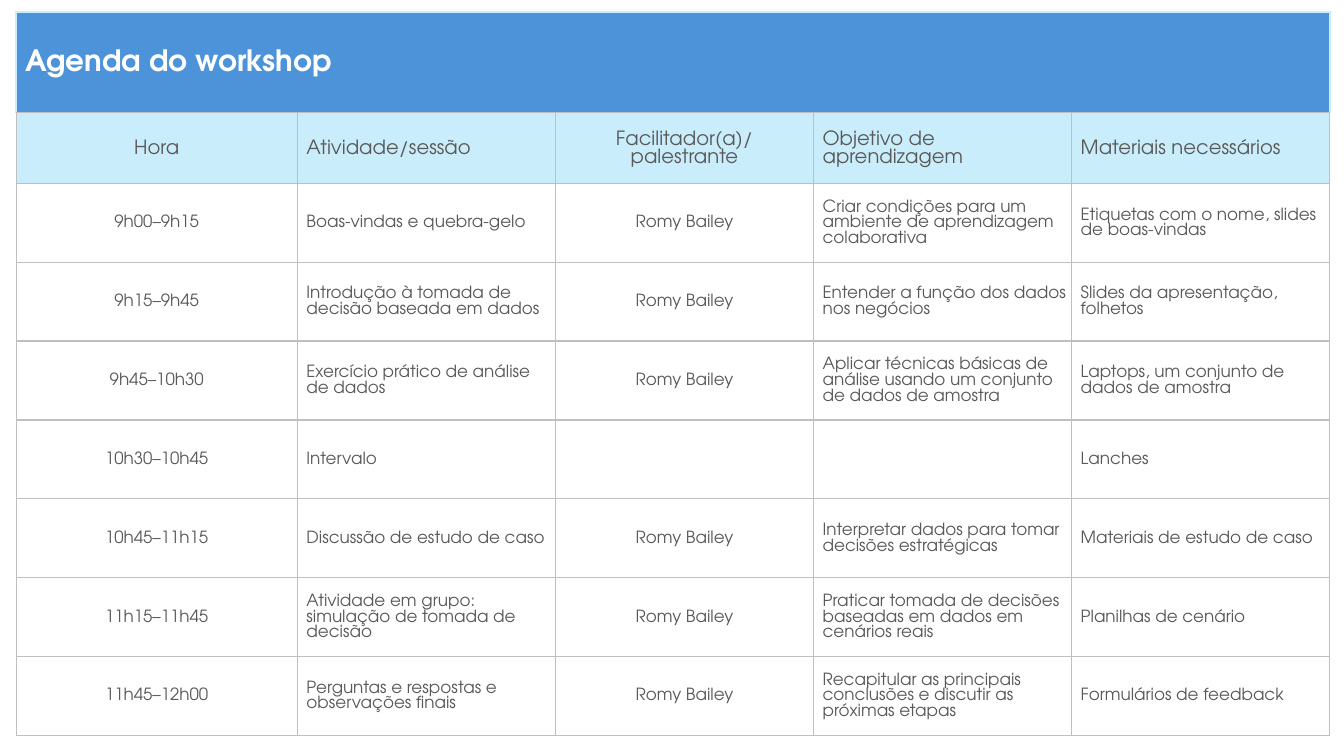
from dataclasses import dataclass

from lxml.etree import SubElement
from pptx import Presentation
from pptx.dml.color import RGBColor
from pptx.enum.text import MSO_ANCHOR, PP_ALIGN
from pptx.oxml.ns import qn
from pptx.util import Inches, Pt


@dataclass(frozen=True)
class Theme:
    font: str = "TeX Gyre Adventor"
    banner: str = "4D93D9"
    header: str = "CAEDFB"
    grid: str = "BFBFBF"
    text: str = "595959"
    white: str = "FFFFFF"
    title_size: int = 21
    header_size: int = 14
    body_size: int = 12
    grid_width: float = 1
    frame_width: float = 1.5


THEME = Theme()

# Agenda content
TITLE = "Agenda do workshop"
HEADERS = ["Hora", "Atividade/sessão", "Facilitador(a)/\vpalestrante",
           "Objetivo de aprendizagem", "Materiais necessários"]
HOST = "Romy Bailey"
SESSIONS = [
    ["9h00–9h15", "Boas-vindas e quebra-gelo", HOST,
     "Criar condições para um ambiente de aprendizagem colaborativa",
     "Etiquetas com o nome, slides de boas-vindas"],
    ["9h15–9h45", "Introdução à tomada de decisão baseada em dados", HOST,
     "Entender a função dos dados nos negócios",
     "Slides da apresentação, folhetos"],
    ["9h45–10h30", "Exercício prático de análise de dados", HOST,
     "Aplicar técnicas básicas de análise usando um conjunto de dados de amostra",
     "Laptops, um conjunto de dados de amostra"],
    ["10h30–10h45", "Intervalo", "", "", "Lanches"],
    ["10h45–11h15", "Discussão de estudo de caso", HOST,
     "Interpretar dados para tomar decisões estratégicas",
     "Materiais de estudo de caso"],
    ["11h15–11h45", "Atividade em grupo: simulação de tomada de decisão", HOST,
     "Praticar tomada de decisões baseadas em dados em cenários reais",
     "Planilhas de cenário"],
    ["11h45–12h00", "Perguntas e respostas e observações finais", HOST,
     "Recapitular as principais conclusões e discutir as próximas etapas",
     "Formulários de feedback"],
]

# Table geometry in inches
LEFT, TOP = 0.16, 0.12
COLUMN_WIDTHS = [2.79] + [2.56] * 4
ROW_HEIGHTS = [1, 0.7] + [0.782] * len(SESSIONS)
CENTERED_COLUMNS = (0, 2)


def set_borders(cell, frame_sides=()):
    """Draw grid lines on a cell, with the thicker frame on the given sides."""
    properties = cell._tc.get_or_add_tcPr()
    for position, side in enumerate("LRTB"):
        framed = side in frame_sides
        width = THEME.frame_width if framed else THEME.grid_width
        line = SubElement(properties, qn(f"a:ln{side}"), w=str(int(Pt(width))))
        fill = SubElement(line, qn("a:solidFill"))
        SubElement(fill, qn("a:srgbClr"), val=THEME.header if framed else THEME.grid)
        # Border lines must come before the cell fill
        properties.insert(position, line)


def set_fill(cell, color):
    if color:
        cell.fill.solid()
        cell.fill.fore_color.rgb = RGBColor.from_string(color)
    else:
        cell.fill.background()


def write_cell(cell, text, size, color=THEME.text, bold=False, centered=False):
    cell.vertical_anchor = MSO_ANCHOR.MIDDLE
    cell.margin_left = Inches(0.01 if centered else 0.09)
    cell.margin_right = cell.margin_top = Inches(0.01)
    cell.margin_bottom = 0
    cell.text_frame.text = text
    paragraph = cell.text_frame.paragraphs[0]
    paragraph.alignment = PP_ALIGN.CENTER if centered else PP_ALIGN.LEFT
    for font in [paragraph.font] + [run.font for run in paragraph.runs]:
        font.name = THEME.font
        font.size = Pt(size)
        font.bold = bold
        font.color.rgb = RGBColor.from_string(color)


def add_agenda_table(slide):
    frame = slide.shapes.add_table(
        len(ROW_HEIGHTS), len(COLUMN_WIDTHS), Inches(LEFT), Inches(TOP),
        Inches(sum(COLUMN_WIDTHS)), Inches(sum(ROW_HEIGHTS)))
    table = frame.table
    table.horz_banding = False
    for column, width in zip(table.columns, COLUMN_WIDTHS):
        column.width = Inches(width)
    for row, height in zip(table.rows, ROW_HEIGHTS):
        row.height = Inches(height)
    return table


def fill_banner(table):
    last_column = len(COLUMN_WIDTHS) - 1
    banner = table.cell(0, 0)
    banner.merge(table.cell(0, last_column))
    write_cell(banner, TITLE, THEME.title_size, THEME.white, bold=True)
    for cell in table.rows[0].cells:
        set_fill(cell, THEME.banner)
        set_borders(cell, frame_sides="LTR")


def fill_row(table, row_index, texts, size, fill=None):
    for column_index, text in enumerate(texts):
        cell = table.cell(row_index, column_index)
        write_cell(cell, text, size, centered=column_index in CENTERED_COLUMNS)
        set_fill(cell, fill)
        set_borders(cell)


def main():
    presentation = Presentation()
    presentation.slide_width = Inches(13.33)
    presentation.slide_height = Inches(7.5)
    slide = presentation.slides.add_slide(presentation.slide_layouts[6])

    table = add_agenda_table(slide)
    fill_banner(table)
    fill_row(table, 1, HEADERS, THEME.header_size, THEME.header)
    for row_index, session in enumerate(SESSIONS, start=2):
        fill_row(table, row_index, session, THEME.body_size)

    presentation.save("out.pptx")


if __name__ == "__main__":
    main()
